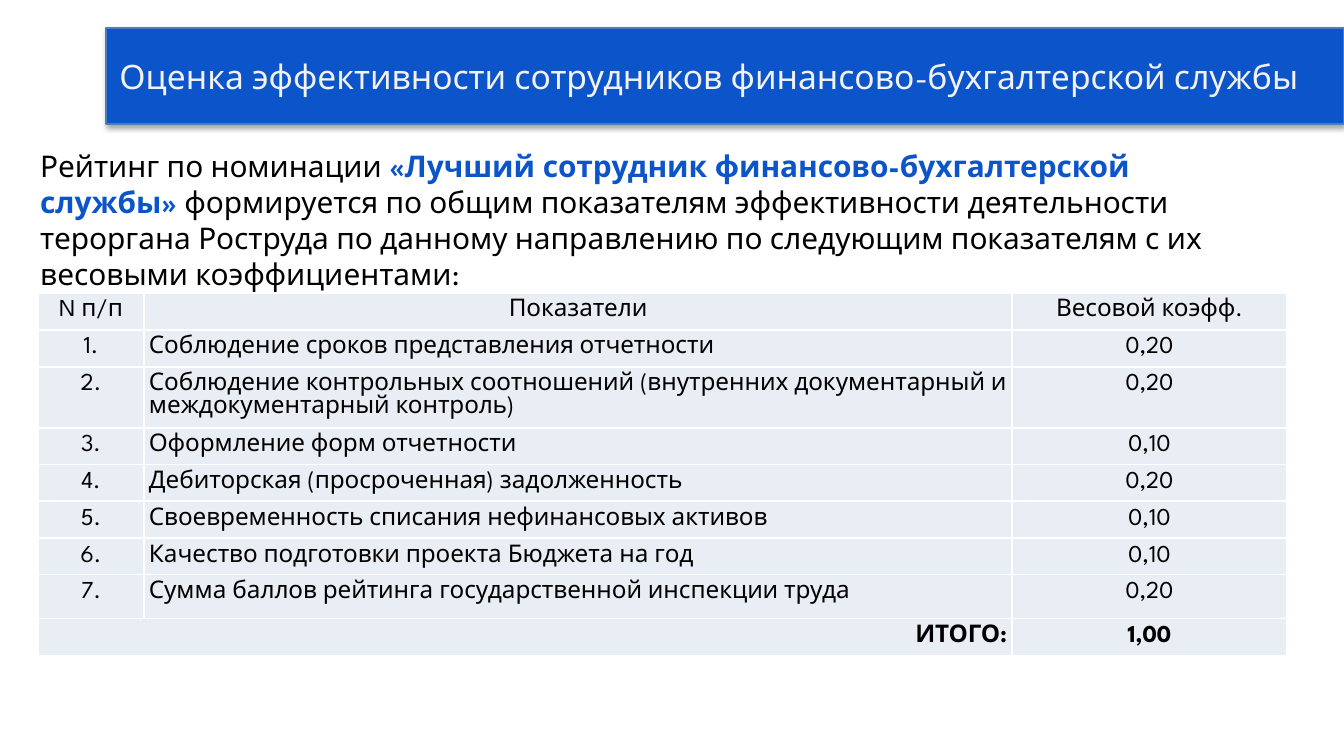
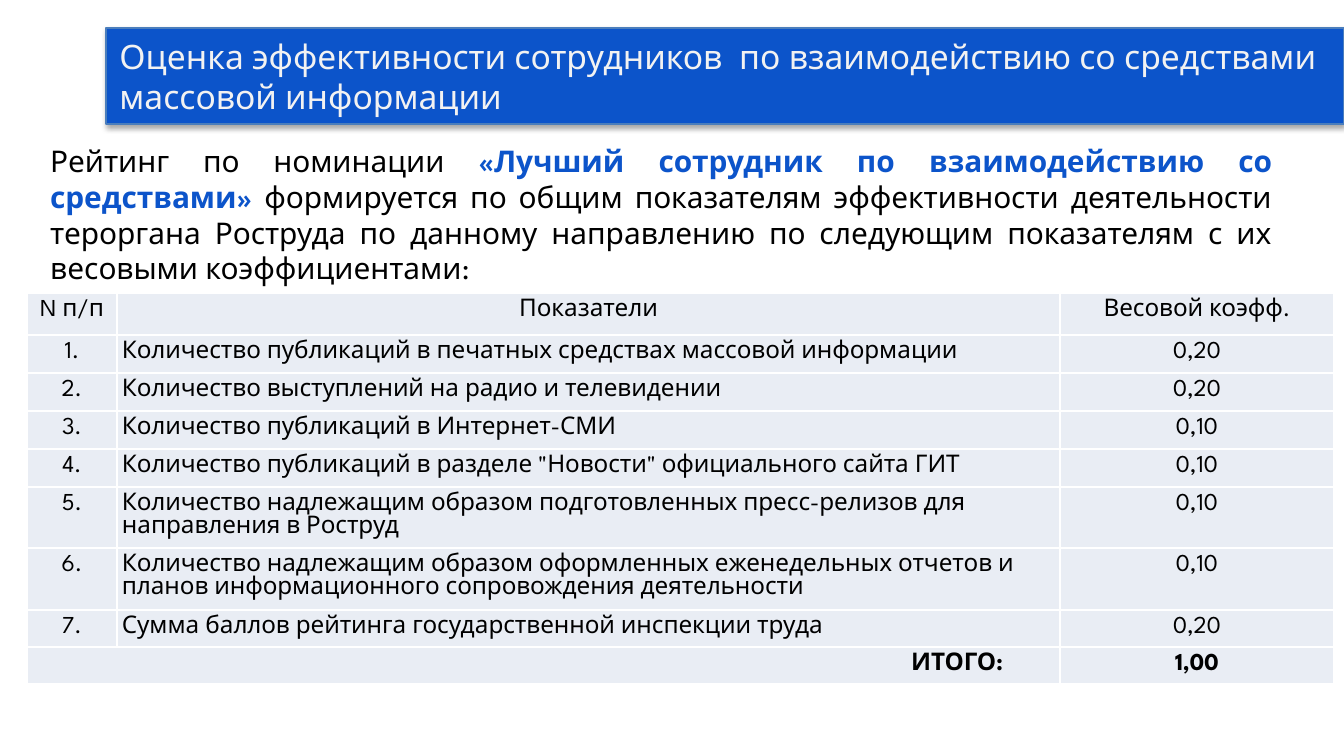
import pptx
import pptx.util
import pptx.dml.color
import pptx.enum.text
import pptx.oxml
import pptx.oxml.ns
from dataclasses import dataclass

ALIGN = pptx.enum.text.PP_ALIGN
ANCHOR = pptx.enum.text.MSO_ANCHOR

LEAD = "Рейтинг по номинации "
TAIL = ("формируется по общим показателям эффективности деятельности тероргана Роструда "
        "по данному направлению по следующим показателям с их весовыми коэффициентами:")
HEAD = ("N п/п", "Показатели", "Весовой коэфф.")
TOTAL = ("ИТОГО:", "1,00")
LAST = ("Сумма баллов рейтинга государственной инспекции труда", "0,20")

SLIDES = [
    {
        "title": "Оценка эффективности сотрудников финансово-бухгалтерской службы",
        "award": "«Лучший сотрудник финансово-бухгалтерской службы» ",
        "intro": (27, 177, 1259, 85),
        "align": ALIGN.LEFT,
        "anchor": ANCHOR.MIDDLE,
        "left": 38,
        "cols": (106, 868, 275),
        "rows": (37, 37, 61, 36, 37, 37, 36, 44, 37),
        "inset": 5,
        "items": [
            ("Соблюдение сроков представления отчетности", "0,20"),
            ("Соблюдение контрольных соотношений (внутренних документарный "
             "и междокументарный контроль)", "0,20"),
            ("Оформление форм отчетности", "0,10"),
            ("Дебиторская (просроченная) задолженность", "0,20"),
            ("Своевременность списания нефинансовых активов", "0,10"),
            ("Качество подготовки проекта Бюджета на год", "0,10"),
            LAST,
        ],
    },
    {
        "title": "Оценка эффективности сотрудников  по взаимодействию со средствами "
                 "массовой информации",
        "award": "«Лучший сотрудник по взаимодействию со средствами» ",
        "intro": (37, 136, 1249, 158),
        "align": ALIGN.JUSTIFY,
        "anchor": ANCHOR.TOP,
        "left": 27,
        "cols": (90, 943, 274),
        "rows": (42, 38, 38, 38, 38, 61, 62, 37, 37),
        "inset": 57,
        "items": [
            ("Количество публикаций в печатных средствах массовой информации", "0,20"),
            ("Количество выступлений на радио и телевидении", "0,20"),
            ("Количество публикаций в Интернет-СМИ", "0,10"),
            ("Количество публикаций в разделе \"Новости\" официального сайта ГИТ", "0,10"),
            ("Количество надлежащим образом подготовленных пресс-релизов "
             "для направления в Роструд", "0,10"),
            ("Количество надлежащим образом оформленных еженедельных отчетов "
             "и планов информационного сопровождения деятельности", "0,10"),
            LAST,
        ],
    },
]


@dataclass(frozen=True)
class Theme:
    font: str = "League Spartan"
    blue: str = "0C54CA"
    edge: str = "4B7EBC"
    pale: str = "F2F2F2"
    black: str = "000000"
    white: str = "FFFFFF"
    cell: str = "E9EDF4"
    title: float = 18
    intro: float = 16
    table: float = 13
    title_gap: float = 21.6
    intro_gap: float = 19.2
    table_gap: float = 12


THEME = Theme()
WIDTH, HEIGHT = 1344, 756
BAND = (106, 28, 1238, 96)
TABLE_TOP = 293
PAD_X, PAD_Y = 5, 7


def px(size):
    return round(size * 914400 / 134.4)


def color(code):
    return pptx.dml.color.RGBColor.from_string(code)


def style(run, size, shade, bold=False):
    font = run.font
    font.name = THEME.font
    font.size = pptx.util.Pt(size)
    font.bold = bold
    font.color.rgb = color(shade)


def space(par, align, gap):
    par.alignment = align
    par.line_spacing = pptx.util.Pt(gap)
    par.space_before = par.space_after = pptx.util.Pt(0)


def xml(text):
    return pptx.oxml.parse_xml(text.replace(">", f" {pptx.oxml.ns.nsdecls('a')}>", 1))


def add_band(slide, text):
    band = slide.shapes.title
    band.left, band.top, band.width, band.height = map(px, BAND)
    band.fill.solid()
    band.fill.fore_color.rgb = color(THEME.blue)
    band.line.color.rgb = color(THEME.edge)
    band.line.width = pptx.util.Pt(0.75)
    band._element.spPr.append(xml(
        '<a:effectLst><a:outerShdw blurRad="39370" dist="22860" dir="5400000" rotWithShape="0">'
        f'<a:srgbClr val="{THEME.black}"><a:alpha val="35000"/></a:srgbClr>'
        '</a:outerShdw></a:effectLst>'))
    frame = band.text_frame
    frame.text = text
    frame.word_wrap = True
    frame.auto_size = pptx.enum.text.MSO_AUTO_SIZE.NONE
    frame.vertical_anchor = ANCHOR.MIDDLE
    par = frame.paragraphs[0]
    space(par, ALIGN.LEFT, THEME.title_gap)
    style(par.runs[0], THEME.title, THEME.pale)


def add_intro(slide, page):
    frame = slide.shapes.add_textbox(*map(px, page["intro"])).text_frame
    frame.word_wrap = True
    frame.vertical_anchor = page["anchor"]
    par = frame.paragraphs[0]
    space(par, page["align"], THEME.intro_gap)
    for text, shade, bold in ((LEAD, THEME.black, False),
                              (page["award"], THEME.blue, True),
                              (TAIL, THEME.black, False)):
        run = par.add_run()
        run.text = text
        style(run, THEME.intro, shade, bold)


def fill_cell(cell, text, align, bold, right):
    cell.margin_left, cell.margin_right = px(PAD_X), px(right)
    cell.margin_top = cell.margin_bottom = px(PAD_Y)
    cell.fill.solid()
    cell.fill.fore_color.rgb = color(THEME.cell)
    props = cell._tc.get_or_add_tcPr()
    for spot, side in enumerate("LRTB"):
        props.insert(spot, xml(
            f'<a:ln{side} w="12700"><a:solidFill><a:srgbClr val="{THEME.white}"/>'
            f'</a:solidFill></a:ln{side}>'))
    cell.text_frame.text = text
    par = cell.text_frame.paragraphs[0]
    space(par, align, THEME.table_gap)
    for run in par.runs:
        style(run, THEME.table, THEME.black, bold)


def add_table(slide, page):
    cols, rows = page["cols"], page["rows"]
    data = [HEAD]
    data += [(f"{num}.", *item) for num, item in enumerate(page["items"], 1)]
    data.append((TOTAL[0], "", TOTAL[1]))
    last = len(data) - 1
    place = (page["left"], TABLE_TOP, sum(cols), sum(rows))
    table = slide.shapes.add_table(len(rows), len(cols), *map(px, place)).table
    table.first_row = table.horz_banding = False
    for col, size in zip(table.columns, cols):
        col.width = px(size)
    for row, size in zip(table.rows, rows):
        row.height = px(size)
    table.cell(last, 0).merge(table.cell(last, 1))
    for y, line in enumerate(data):
        for x, text in enumerate(line):
            align, right = ALIGN.CENTER, PAD_X
            if y == last and x == 0:
                align, right = ALIGN.RIGHT, page["inset"]
            elif y > 0 and x == 1:
                align = ALIGN.LEFT
            fill_cell(table.cell(y, x), text, align, y == last, right)


def main():
    deck = pptx.Presentation()
    deck.slide_width, deck.slide_height = px(WIDTH), px(HEIGHT)
    layout = deck.slide_layouts.get_by_name("Title Only")
    for page in SLIDES:
        slide = deck.slides.add_slide(layout)
        add_band(slide, page["title"])
        add_intro(slide, page)
        add_table(slide, page)
    deck.save("out.pptx")


if __name__ == "__main__":
    main()
